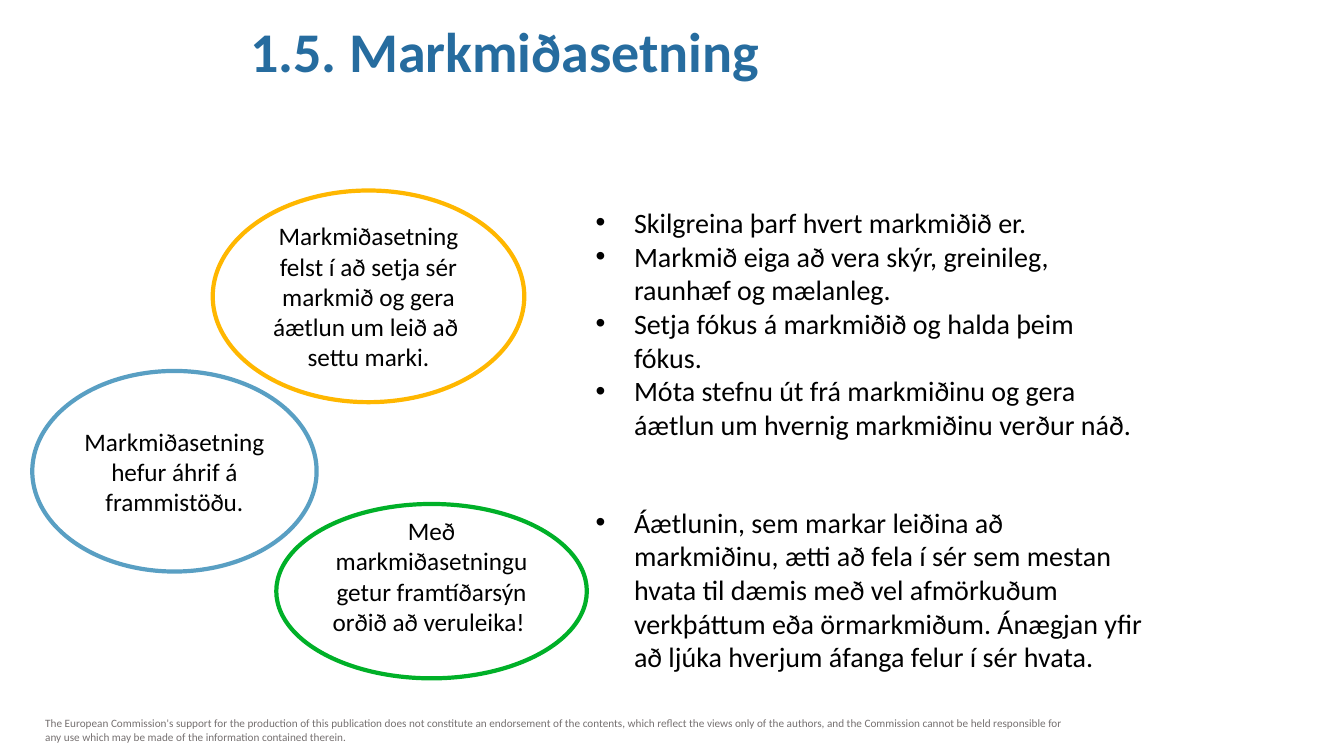
from dataclasses import dataclass

from lxml import etree
from pptx import Presentation
from pptx.dml.color import RGBColor
from pptx.enum import shapes, text
from pptx.oxml import ns
from pptx.util import Inches, Pt

BLUE = RGBColor(0x26, 0x6C, 0x9F)
SKY = RGBColor(0x59, 0x9F, 0xC3)
GREEN = RGBColor(0x00, 0xB0, 0x28)
GOLD = RGBColor(0xFF, 0xB7, 0x00)
GRAY = RGBColor(0x76, 0x71, 0x71)
BLACK = RGBColor(0, 0, 0)
WHITE = RGBColor(0xFF, 0xFF, 0xFF)


@dataclass
class Oval:
    left: float
    top: float
    width: float
    height: float
    line: RGBColor
    words: str
    foot: float = 0.05


OVALS = [
    Oval(2.74, 5, 3.08, 1.73, GREEN,
         "Með markmiðasetningu getur framtíðarsýn orðið að veruleika!\u00a0", 0.35),
    Oval(0.32, 3.68, 2.82, 1.99, SKY,
         "Markmiðasetning hefur áhrif á frammistöðu."),
    Oval(2.11, 1.89, 3.09, 2.1, GOLD,
         "Markmiðasetning felst í að setja sér markmið og gera "
         "áætlun um leið að\u00a0\nsettu marki."),
]
GOALS = [
    "Skilgreina þarf hvert markmiðið er.",
    "Markmið eiga að vera skýr, greinileg, raunhæf og mælanleg.",
    "Setja fókus á markmiðið og halda þeim fókus.",
    "Móta stefnu út frá markmiðinu og gera áætlun um hvernig markmiðinu verður náð.",
    "Áætlunin, sem markar leiðina að markmiðinu, ætti að fela í sér sem mestan hvata "
    "til dæmis með vel afmörkuðum verkþáttum eða örmarkmiðum. Ánægjan yfir að ljúka "
    "hverjum áfanga felur í sér hvata.",
]
NOTE = (
    "The European Commission's support for the production of this publication does not "
    "constitute an endorsement of the contents, which reflect the views only of the "
    "authors, and the Commission cannot be held responsible for any use which may be "
    "made of the information contained therein."
)


def style(frame, size: float, color: RGBColor, align=None, bold: bool = False) -> None:
    frame.word_wrap = True
    for para in frame.paragraphs:
        para.alignment = align
        for run in para.runs:
            font = run.font
            font.name, font.size, font.bold = "Calibri", Pt(size), bold
            font.color.rgb = color


def add_bullet(para) -> None:
    props = para._p.get_or_add_pPr()
    props.set("marL", str(Inches(0.38)))
    props.set("indent", str(Inches(-0.38)))
    etree.SubElement(props, ns.qn("a:buFont"), typeface="Arial")
    etree.SubElement(props, ns.qn("a:buChar"), char="•")


def add_text(slide, left: float, top: float, width: float, height: float, words: str):
    box = slide.shapes.add_textbox(
        Inches(left), Inches(top), Inches(width), Inches(height))
    box.text_frame.text = words
    return box.text_frame


def add_oval(slide, oval: Oval) -> None:
    shape = slide.shapes.add_shape(
        shapes.MSO_SHAPE.OVAL, Inches(oval.left), Inches(oval.top),
        Inches(oval.width), Inches(oval.height))
    shape.shadow.inherit = False
    shape.fill.solid()
    shape.fill.fore_color.rgb = WHITE
    shape.line.color.rgb = oval.line
    shape.line.width = Pt(3)
    frame = shape.text_frame
    frame.text = oval.words
    frame.vertical_anchor = text.MSO_ANCHOR.MIDDLE
    frame.margin_bottom = Inches(oval.foot)
    style(frame, 18, BLACK, text.PP_ALIGN.CENTER)


def main() -> None:
    deck = Presentation()
    deck.slide_width, deck.slide_height = Inches(13.33), Inches(7.5)
    slide = deck.slides.add_slide(deck.slide_layouts[5])

    title = slide.shapes.title
    title.left, title.top = Inches(1.94), Inches(0.11)
    title.width, title.height = Inches(6.13), Inches(0.77)
    title.text_frame.text = "1.5. Markmiðasetning"
    title.text_frame.auto_size = text.MSO_AUTO_SIZE.NONE
    title.text_frame.vertical_anchor = text.MSO_ANCHOR.TOP
    style(title.text_frame, 40, BLUE, text.PP_ALIGN.CENTER, True)

    style(add_text(slide, 0.35, 7.06, 10.46, 0.37, NOTE), 8, GRAY)

    goals = add_text(slide, 5.81, 1.99, 5.65, 4.81, "\n".join(GOALS))
    for para in goals.paragraphs:
        add_bullet(para)
    goals.paragraphs[-1].space_before = Pt(46)
    style(goals, 20, BLACK)

    for oval in OVALS:
        add_oval(slide, oval)

    deck.save("out.pptx")


if __name__ == "__main__":
    main()
